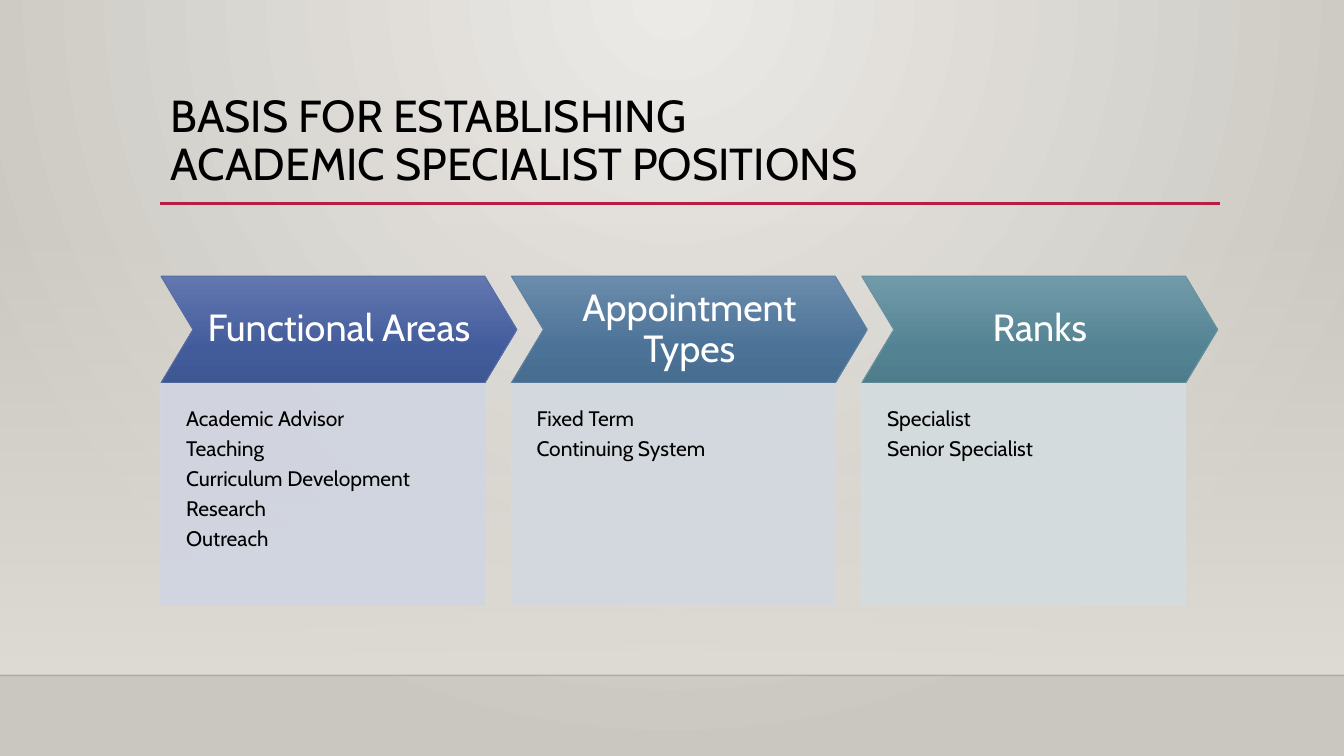
import pptx
import pptx.util
import pptx.dml.color
import pptx.enum.shapes
import pptx.enum.text
import pptx.oxml
import pptx.oxml.ns
import lxml.etree

Pt = pptx.util.Pt
Shape = pptx.enum.shapes.MSO_SHAPE
Align = pptx.enum.text.PP_ALIGN
Anchor = pptx.enum.text.MSO_ANCHOR
qn = pptx.oxml.ns.qn
FONT = "Cabin"
DOWN = '<a:lin ang="5400000" scaled="0"/>'
GLOW = '<a:path path="circle"><a:fillToRect l="43000" r="43000" b="100000"/></a:path>'


def hue(code):
    return pptx.dml.color.RGBColor.from_string(code)


def shade(fill, root, stops, flow):
    """Fill with a gradient of (percent, colour, opacity) stops along flow."""
    fill.gradient()
    marks = "".join(
        f'<a:gs pos="{pos * 1000}"><a:srgbClr val="{code}">'
        f'<a:alpha val="{alpha * 1000}"/></a:srgbClr></a:gs>'
        for pos, code, alpha in stops)
    old = root.find(".//" + qn("a:gradFill"))
    new = pptx.oxml.parse_xml(
        f'<a:gradFill {pptx.oxml.ns.nsdecls("a")} rotWithShape="1">'
        f'<a:gsLst>{marks}</a:gsLst>{flow}</a:gradFill>')
    old.getparent().replace(old, new)


deck = pptx.Presentation()
deck.slide_width, deck.slide_height = Pt(960), Pt(540)
slide = deck.slides.add_slide(deck.slide_layouts[5])
shapes = slide.shapes

# Backdrop
shade(slide.background.fill, slide.element,
      [(0, "ECEAE7", 100), (100, "CAC7C1", 100)], GLOW)
band = shapes.add_shape(Shape.RECTANGLE, 0, Pt(159), Pt(960), Pt(323.4))
band.shadow.inherit = False
band.line.fill.background()
shade(band.fill, band.element, [(0, "DFDBD5", 0), (100, "DFDBD5", 100)], DOWN)

rules = [(0, 960, 482.4, "000001", 1, 20), (114.5, 871.2, 145.4, "B71E42", 2.5, 100)]
for start, end, y, code, width, alpha in rules:
    rule = shapes.add_connector(
        pptx.enum.shapes.MSO_CONNECTOR.STRAIGHT, Pt(start), Pt(y), Pt(end), Pt(y))
    rule.line.color.rgb = hue(code)
    rule.line.width = Pt(width)
    paint = rule.element.find(".//" + qn("a:srgbClr"))
    lxml.etree.SubElement(paint, qn("a:alpha")).set("val", str(alpha * 1000))
    lxml.etree.SubElement(rule.element.spPr, qn("a:effectLst"))

# Title, raised above the band
title = shapes.title
title.left, title.top, title.width, title.height = Pt(114.5), Pt(63.4), Pt(756), Pt(82.8)
shapes.element.append(title.element)
frame = title.text_frame
frame.text = "BASIS FOR ESTABLISHING\vACADEMIC SPECIALIST POSITIONS"
frame.word_wrap = True
frame.auto_size = pptx.enum.text.MSO_AUTO_SIZE.NONE
frame.vertical_anchor = Anchor.TOP
line = frame.paragraphs[0]
line.alignment = Align.LEFT
line.line_spacing = 0.9
line.font.name, line.font.size = FONT, Pt(32)
line.font.color.rgb = hue("000000")

# Columns: heading, gradient colours, edge, panel colour, items
columns = [
    ("Functional Areas", ("6378B0", "425B9B", "3F5793"), "586EA6", "D1D5E1",
     ["Academic Advisor", "Teaching", "Curriculum Development", "Research", "Outreach"]),
    ("Appointment Types", ("6B8CAC", "4B7297", "476D8F"), "6083A3", "D2D9E0",
     ["Fixed Term", "Continuing System"]),
    ("Ranks", ("729BA9", "538393", "4F7C8B"), "6892A0", "D4DCDF",
     ["Specialist", "Senior Specialist"]),
]
for index, (heading, tones, edge, tint, items) in enumerate(columns):
    left = Pt(115 + 250.3 * index)
    arrow = shapes.add_shape(Shape.CHEVRON, left, Pt(197.3), Pt(254.2), Pt(76.3))
    arrow.adjustments[0] = 0.3
    shade(arrow.fill, arrow.element,
          [(pos, tone, 100) for pos, tone in zip((0, 69, 100), tones)], DOWN)
    panel = shapes.add_shape(Shape.RECTANGLE, left, Pt(273.6), Pt(231.4), Pt(159.1))
    panel.fill.solid()
    panel.fill.fore_color.rgb = hue(tint)
    for paint in panel.element.spPr.iter(qn("a:srgbClr")):
        lxml.etree.SubElement(paint, qn("a:alpha")).set("val", "90000")

    parts = [
        (arrow, [heading], edge, 27, "FFFFFF", Align.CENTER, Anchor.MIDDLE, (9.4, 9.4, 9.4, 9.4)),
        (panel, items, tint, 15, "000000", Align.LEFT, Anchor.TOP, (18, 18, 18, 36.7)),
    ]
    for shape, texts, rim, size, ink, align, anchor, pads in parts:
        shape.shadow.inherit = False
        shape.line.color.rgb = hue(rim)
        shape.line.width = Pt(0.75)
        frame = shape.text_frame
        frame.word_wrap = True
        frame.vertical_anchor = anchor
        (frame.margin_left, frame.margin_top,
         frame.margin_right, frame.margin_bottom) = map(Pt, pads)
        frame.text = "\n".join(texts)
        for line in frame.paragraphs:
            line.alignment = align
            line.line_spacing = 0.9
            line.space_after = Pt(size * 0.35)
            line.font.name, line.font.size = FONT, Pt(size)
            line.font.color.rgb = hue(ink)

deck.save("out.pptx")
